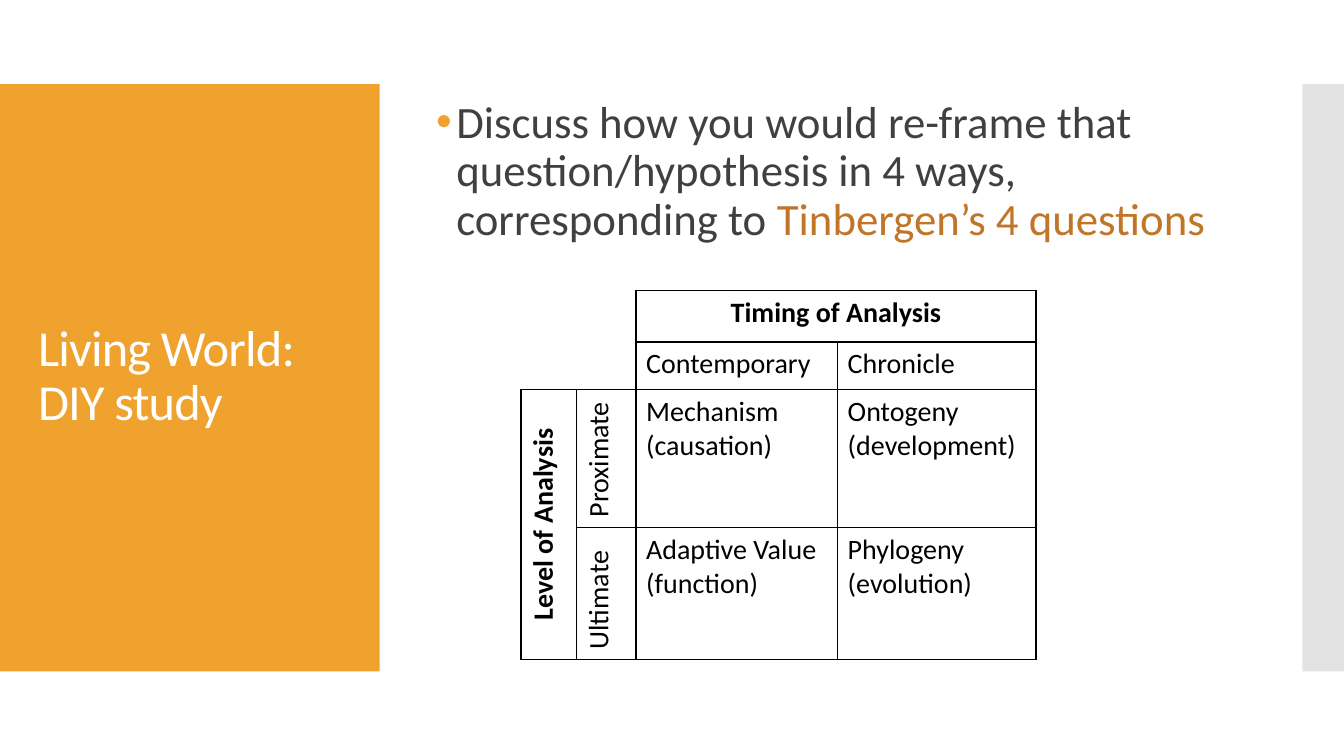
from dataclasses import dataclass

from lxml import etree
from pptx import Presentation
from pptx.dml.color import RGBColor
from pptx.enum.shapes import MSO_SHAPE
from pptx.enum.text import MSO_ANCHOR, PP_ALIGN
from pptx.oxml.ns import qn
from pptx.util import Cm, Pt

RECTANGLE = MSO_SHAPE.RECTANGLE
MIDDLE, TOP = MSO_ANCHOR.MIDDLE, MSO_ANCHOR.TOP
CENTER, LEFT = PP_ALIGN.CENTER, PP_ALIGN.LEFT

SIDES = {"a:lnL": (0, -1), "a:lnR": (0, 1), "a:lnT": (-1, 0), "a:lnB": (1, 0)}


@dataclass(frozen=True)
class Theme:
    font: str = "Calibri"
    accent: str = "F0A22E"
    highlight: str = "C17529"
    grey: str = "C8C8C8"
    body_text: str = "404040"
    white: str = "FFFFFF"
    black: str = "000000"
    title_size: int = 36
    body_size: int = 32
    table_size: int = 20
    border_width: int = 1


def set_values(target, values):
    for name, value in values.items():
        setattr(target, name, value)


def add_element(parent, tag, **attributes):
    return etree.SubElement(parent, qn(tag), attributes)


class SlideBuilder:
    def __init__(self, slide, theme):
        self.slide = slide
        self.theme = theme

    def panel(self, box, color, opacity=100):
        shape = self.slide.shapes.add_shape(RECTANGLE, *map(Cm, box))
        shape.shadow.inherit = False
        shape.fill.solid()
        shape.fill.fore_color.rgb = RGBColor.from_string(color)
        shape.line.fill.background()
        if opacity < 100:
            fill = shape.fill._xPr.find(qn("a:solidFill"))
            add_element(fill[0], "a:alpha", val=str(opacity * 1000))

    def run(self, paragraph, text, color, size, bold=False):
        run = paragraph.add_run()
        run.text = text
        set_values(run.font, {"name": self.theme.font, "size": Pt(size), "bold": bold})
        run.font.color.rgb = RGBColor.from_string(color)
        return run

    def text(self, box, runs, size, anchor=TOP, bullet=False, spacing=0):
        shape = self.slide.shapes.add_textbox(*map(Cm, box))
        set_values(shape.text_frame, {"word_wrap": True, "vertical_anchor": anchor})
        paragraph = shape.text_frame.paragraphs[0]
        paragraph.line_spacing = 0.9
        if bullet:
            self.bullet(paragraph)
        for text, color in runs:
            run = self.run(paragraph, text, color, size)
            if spacing:
                run.font._element.set("spc", str(spacing))

    def bullet(self, paragraph):
        properties = paragraph._p.get_or_add_pPr()
        indent = Cm(0.51)
        properties.set("marL", str(indent))
        properties.set("indent", str(-indent))
        color = add_element(properties, "a:buClr")
        add_element(color, "a:srgbClr", val=self.theme.accent)
        add_element(properties, "a:buFont", typeface="Arial")
        add_element(properties, "a:buChar", char="•")

    def border(self, cell, side, visible):
        properties = cell._tc.get_or_add_tcPr()
        line = add_element(properties, side, w=str(Pt(self.theme.border_width)))
        if visible:
            fill = add_element(line, "a:solidFill")
            add_element(fill, "a:srgbClr", val=self.theme.black)
        else:
            add_element(line, "a:noFill")

    def table(self, left, top, widths, heights, texts, merges, headings, first_inside):
        shape = self.slide.shapes.add_table(
            len(heights), len(widths), Cm(left), Cm(top), Cm(sum(widths)), Cm(sum(heights))
        )
        table = shape.table
        set_values(table, {"first_row": False, "horz_banding": False})
        for column, width in zip(table.columns, widths):
            column.width = Cm(width)
        for row, height in zip(table.rows, heights):
            row.height = Cm(height)

        for row in range(len(heights)):
            for column in range(len(widths)):
                cell = table.cell(row, column)
                for side, (down, across) in SIDES.items():
                    furthest = max(row, row + down, column, column + across)
                    self.border(cell, side, furthest >= first_inside)
                cell.fill.solid()
                cell.fill.fore_color.rgb = RGBColor.from_string(self.theme.white)

        for start, end in merges:
            table.cell(*start).merge(table.cell(*end))

        for (row, column), lines in texts.items():
            cell = table.cell(row, column)
            heading = (row, column) in headings
            if column < first_inside:
                cell._tc.get_or_add_tcPr().set("vert", "vert270")
            frame = cell.text_frame
            for index, line in enumerate(lines):
                paragraph = frame.add_paragraph() if index else frame.paragraphs[0]
                paragraph.alignment = CENTER if heading else LEFT
                self.run(paragraph, line, self.theme.black, self.theme.table_size, heading)


def main():
    theme = Theme()
    presentation = Presentation()
    set_values(presentation, {"slide_width": Cm(33.87), "slide_height": Cm(19.05)})
    slide = presentation.slides.add_slide(presentation.slide_layouts[6])
    builder = SlideBuilder(slide, theme)

    builder.panel((0, 2.12, 9.57, 14.8), theme.accent)
    builder.panel((32.82, 2.12, 1.05, 14.8), theme.grey, opacity=50)
    builder.text(
        (0.71, 3.12, 8.18, 12.78),
        [("Living World: DIY study", theme.white)],
        theme.title_size,
        anchor=MIDDLE,
        spacing=-60,
    )
    builder.text(
        (10.74, 2.39, 21.34, 14.22),
        [
            (
                "Discuss how you would re-frame that question/hypothesis in 4 ways, corresponding to ",
                theme.body_text,
            ),
            ("Tinbergen’s 4 questions", theme.highlight),
        ],
        theme.body_size,
        bullet=True,
    )
    builder.table(
        13.13,
        7.32,
        widths=(1.4, 1.5, 5.08, 5),
        heights=(1.3, 1.19, 3.48, 3.33),
        texts={
            (0, 2): ["Timing of Analysis"],
            (1, 2): ["Contemporary"],
            (1, 3): ["Chronicle"],
            (2, 0): ["Level of Analysis"],
            (2, 1): ["Proximate"],
            (2, 2): ["Mechanism", "(causation)"],
            (2, 3): ["Ontogeny", "(development)"],
            (3, 1): ["Ultimate"],
            (3, 2): ["Adaptive Value", "(function)"],
            (3, 3): ["Phylogeny", "(evolution)"],
        },
        merges=[((0, 2), (0, 3)), ((2, 0), (3, 0))],
        headings={(0, 2), (2, 0)},
        first_inside=2,
    )
    presentation.save("out.pptx")


if __name__ == "__main__":
    main()
